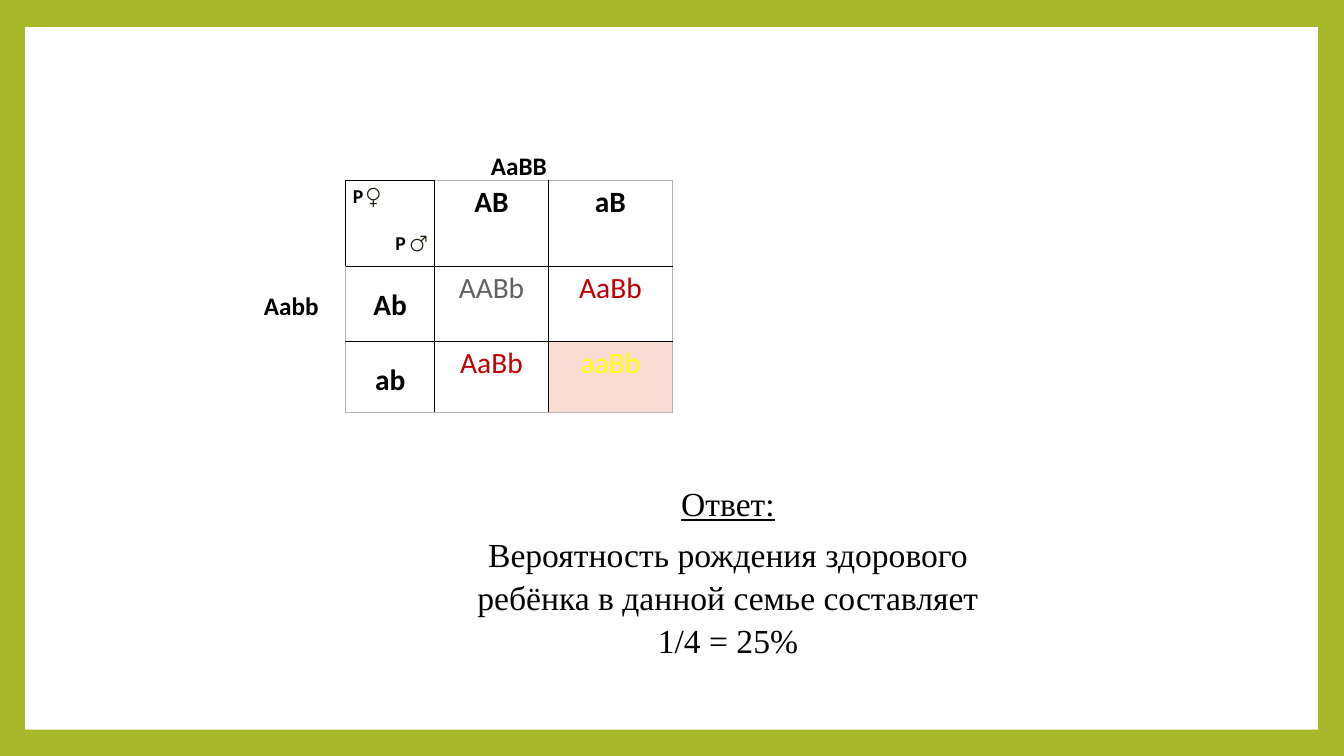
from lxml.etree import SubElement
from pptx import Presentation
from pptx.dml.color import RGBColor
from pptx.enum.shapes import MSO_SHAPE
from pptx.enum.text import MSO_ANCHOR, PP_ALIGN
from pptx.oxml.ns import qn
from pptx.util import Inches, Pt

BLACK, GRAY, RED, OLIVE = "000000", "B2B2B2", "C00000", "171705"
COLS = [0.88, 1.13, 1.23]
ROWS = [0.85, 0.75, 0.7]
GRID = [
    [None, ("AB", BLACK), ("aB", BLACK)],
    [("Ab", BLACK), ("AABb", "616162"), ("AaBb", RED)],
    [("ab", BLACK), ("AaBb", RED), ("aaBb", "FFFF00")],
]


def rgb(code):
    return RGBColor.from_string(code)


def write(par, text, size=21, color=BLACK, font="Calibri", bold=False,
          line=False, align=PP_ALIGN.CENTER):
    """Add one formatted run to a paragraph."""
    par.alignment = align
    run = par.add_run()
    run.text = text
    face = run.font
    face.size, face.name = Pt(size), font
    face.bold, face.underline = bold, line
    face.color.rgb = rgb(color)


def add_box(slide, left, top, width, height, wrap=True):
    box = slide.shapes.add_textbox(
        Inches(left), Inches(top), Inches(width), Inches(height))
    box.text_frame.word_wrap = wrap
    return box.text_frame


def add_label(slide, text, left, top):
    frame = add_box(slide, left, top, 0.77, 0.4, wrap=False)
    write(frame.paragraphs[0], text, size=18, bold=True, align=PP_ALIGN.LEFT)


def add_panel(slide):
    panel = slide.shapes.add_shape(
        MSO_SHAPE.RECTANGLE, Inches(0.25), Inches(0.27),
        Inches(12.82), Inches(6.97))
    panel.shadow.inherit = False
    panel.fill.solid()
    panel.fill.fore_color.rgb = rgb("FFFFFF")
    panel.line.fill.background()


def set_edges(cell, row, col):
    """Draw black inner lines and a gray rim, black around the corner cell."""
    corner = row == col == 0
    rim = {"lnL": col == 0, "lnR": col == len(COLS) - 1,
           "lnT": row == 0, "lnB": row == len(ROWS) - 1}
    props = cell._tc.get_or_add_tcPr()
    for spot, (tag, outer) in enumerate(rim.items()):
        edge = SubElement(props, qn("a:" + tag), w=str(Pt(1)))
        props.insert(spot, edge)
        fill = SubElement(edge, qn("a:solidFill"))
        shade = GRAY if outer and not corner else BLACK
        SubElement(fill, qn("a:srgbClr"), val=shade)


def fill_corner(frame):
    top = frame.paragraphs[0]
    write(top, "Р", size=14, bold=True, align=PP_ALIGN.LEFT)
    write(top, " ", size=10, color=OLIVE, bold=True, align=PP_ALIGN.LEFT)
    write(top, "♀", size=14, color=OLIVE, bold=True, align=PP_ALIGN.LEFT)
    low = frame.add_paragraph()
    low.space_before = Pt(17)
    write(low, "Р", size=14, bold=True, align=PP_ALIGN.RIGHT)
    write(low, " ♂", size=14, color=OLIVE, bold=True, align=PP_ALIGN.RIGHT)


def add_cross(slide):
    """Add the Punnett square."""
    table = slide.shapes.add_table(
        len(ROWS), len(COLS), Inches(3.43), Inches(1.79),
        Inches(sum(COLS)), Inches(sum(ROWS))).table
    table.first_row = table.horz_banding = False
    for col, width in zip(table.columns, COLS):
        col.width = Inches(width)
    for row, height in zip(table.rows, ROWS):
        row.height = Inches(height)
    for r, line in enumerate(GRID):
        for c, entry in enumerate(line):
            cell = table.cell(r, c)
            cell.margin_left = cell.margin_right = Inches(0.07)
            cell.margin_bottom = Inches(0.04)
            cell.margin_top = Inches(0.21 if r and not c else 0.04)
            cell.vertical_anchor = MSO_ANCHOR.TOP
            cell.fill.background()
            if entry:
                text, color = entry
                write(cell.text_frame.paragraphs[0], text, color=color,
                      bold=r == 0 or c == 0)
            else:
                fill_corner(cell.text_frame)
            set_edges(cell, r, c)
    healthy = table.cell(2, 2)
    healthy.fill.solid()
    healthy.fill.fore_color.rgb = rgb("F9DDD4")


def add_answer(slide):
    frame = add_box(slide, 4.52, 4.71, 5.4, 1.91)
    head, body = frame.paragraphs[0], frame.add_paragraph()
    for par in (head, body):
        par.line_spacing, par.space_after = 1.07, Pt(6)
    face = "Times New Roman"
    write(head, "Ответ:", size=24, font=face, line=True)
    write(body, "Вероятность рождения здорового ребёнка в данной семье "
          "составляет 1/4 = 25%", size=24, font=face)


def main():
    deck = Presentation()
    deck.slide_width, deck.slide_height = Inches(13.33), Inches(7.5)
    slide = deck.slides.add_slide(deck.slide_layouts[6])
    back = slide.background.fill
    back.solid()
    back.fore_color.rgb = rgb("A6B727")
    add_panel(slide)
    add_cross(slide)
    add_label(slide, "AaBB", 4.77, 1.44)
    add_label(slide, "Aabb", 2.52, 2.83)
    add_answer(slide)
    deck.save("out.pptx")


if __name__ == "__main__":
    main()
